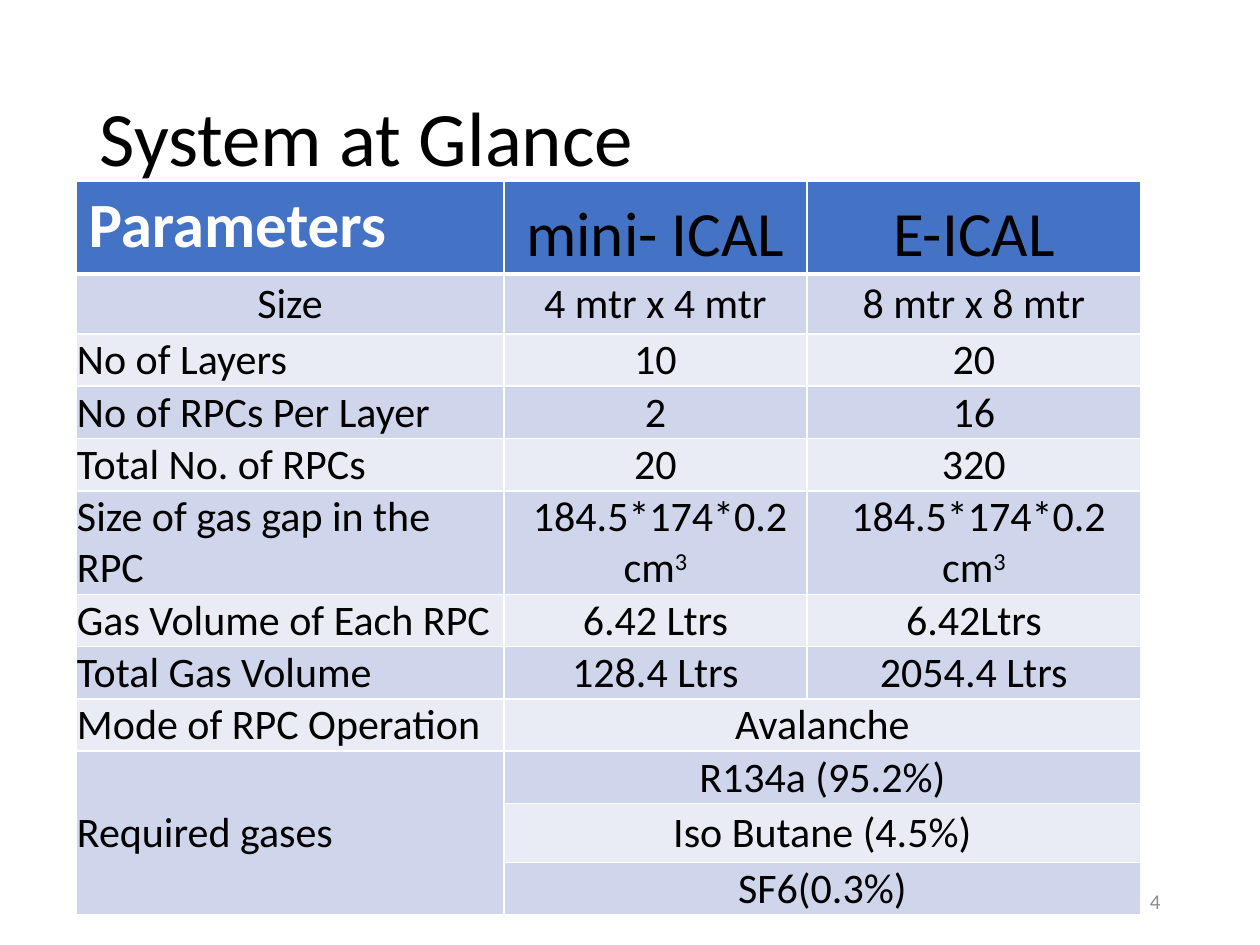
from lxml import etree
from pptx import Presentation
from pptx.dml.color import RGBColor
from pptx.enum.text import MSO_ANCHOR, PP_ALIGN
from pptx.oxml.ns import qn
from pptx.util import Pt

LEFT, CENTER, RIGHT = PP_ALIGN.LEFT, PP_ALIGN.CENTER, PP_ALIGN.RIGHT
MIDDLE, TOP, BOTTOM = MSO_ANCHOR.MIDDLE, MSO_ANCHOR.TOP, MSO_ANCHOR.BOTTOM

PX = 914400 // 126
FONT = "Calibri"
COLORS = {
    "text": "000000",
    "white": "FFFFFF",
    "header": "4472C4",
    "dark_band": "CFD5EA",
    "light_band": "E9EBF5",
    "number": "8C8C8C",
}

TITLE = "System at Glance"
PAGE = "4"
HEADER = ["Parameters", "mini- ICAL", "E-ICAL"]
# "^" marks the superscript that follows, "\n" a new paragraph
ROWS = [
    ["Size", "4 mtr x 4 mtr", "8 mtr x 8 mtr"],
    ["No of Layers", "10", "20"],
    ["No of RPCs Per Layer", "2", "16"],
    ["Total No. of RPCs", "20", "320"],
    ["Size of gas gap in the RPC", " 184.5*174*0.2 cm^3", " 184.5*174*0.2\ncm^3"],
    ["Gas Volume of Each RPC", "6.42 Ltrs", "6.42Ltrs"],
    ["Total Gas Volume", "128.4 Ltrs", "2054.4 Ltrs"],
    ["Mode of RPC Operation", "Avalanche", None],
    ["Required gases", "R134a (95.2%)", None],
    [None, "Iso Butane (4.5%)", None],
    [None, "SF6(0.3%)", None],
]
MERGES = [((8, 1), (8, 2)), ((9, 0), (11, 0))] + [((i, 1), (i, 2)) for i in (9, 10, 11)]
COL_WIDTHS = [428, 303, 334]
ROW_HEIGHTS = [93, 60, 52, 52, 52, 102, 52, 52, 52, 52, 59, 52]


def px(*values):
    return [v * PX for v in values]


def rgb(name):
    return RGBColor.from_string(COLORS[name])


def add_run(p, text, size, color, bold=False):
    r = p.add_run()
    r.text = text
    r.font.name, r.font.size, r.font.bold = FONT, Pt(size), bold
    r.font.color.rgb = rgb(color)
    return r


def write(tf, text, size, color, align, bold=False):
    for i, line in enumerate(text.split("\n")):
        p = tf.add_paragraph() if i else tf.paragraphs[0]
        p.alignment = align
        base, _, power = line.partition("^")
        add_run(p, base, size, color, bold)
        if power:
            r = add_run(p, power, size, color, bold)
            r._r.get_or_add_rPr().set("baseline", "30000")


def set_borders(cell, bottom):
    tcPr = cell._tc.get_or_add_tcPr()
    for side, width in (("L", 1), ("R", 1), ("T", 1), ("B", bottom)):
        ln = etree.SubElement(tcPr, qn(f"a:ln{side}"), w=str(Pt(width)))
        fill = etree.SubElement(ln, qn("a:solidFill"))
        etree.SubElement(fill, qn("a:srgbClr"), val=COLORS["white"])


def format_cell(cell, i, j, text):
    set_borders(cell, 1 if i else 3)
    band = "dark_band" if i % 2 else "light_band"
    cell.fill.solid()
    cell.fill.fore_color.rgb = rgb(band if i else "header")
    corner = i == j == 0
    if not corner:
        cell.margin_left = cell.margin_right = cell.margin_top = PX
        cell.margin_bottom = 0
    cell.vertical_anchor = MIDDLE if i else TOP if corner else BOTTOM
    if text is not None:
        align = CENTER if j or i == 1 else LEFT
        write(cell.text_frame, text, 24 if i else 36,
              "white" if corner else "text", align, corner)


def add_parameters(s):
    table = s.shapes.add_table(len(ROW_HEIGHTS), len(COL_WIDTHS),
                               *px(76, 181, sum(COL_WIDTHS), sum(ROW_HEIGHTS))).table
    for col, width in zip(table.columns, COL_WIDTHS):
        col.width = width * PX
    for row, height in zip(table.rows, ROW_HEIGHTS):
        row.height = height * PX
    for i, texts in enumerate([HEADER] + ROWS):
        for j, text in enumerate(texts):
            format_cell(table.cell(i, j), i, j, text)
    for first, last in MERGES:
        table.cell(*first).merge(table.cell(*last))


def main():
    prs = Presentation()
    prs.slide_width, prs.slide_height = px(1260, 945)
    s = prs.slides.add_slide(prs.slide_layouts[5])

    title = s.shapes.title
    title.left, title.top, title.width, title.height = px(87, 50, 1086, 183)
    tf = title.text_frame
    tf.vertical_anchor = MIDDLE
    write(tf, TITLE, 44, "text", LEFT)
    tf.paragraphs[0].line_spacing = 0.9

    add_parameters(s)

    tf = s.shapes.add_textbox(*px(890, 876, 283, 50)).text_frame
    tf.word_wrap = True
    tf.vertical_anchor = MIDDLE
    write(tf, PAGE, 12, "number", RIGHT)

    prs.save("out.pptx")


if __name__ == "__main__":
    main()
